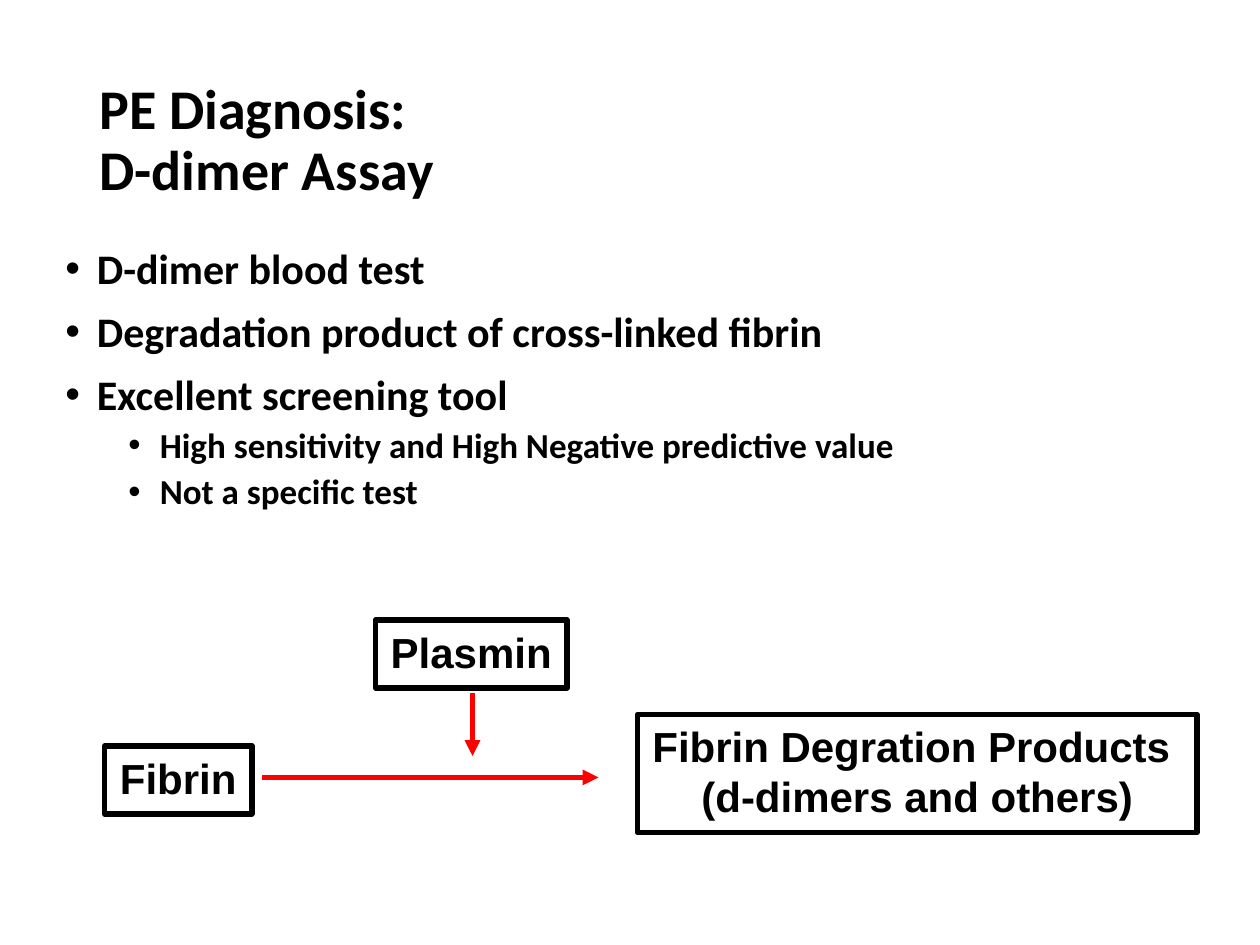
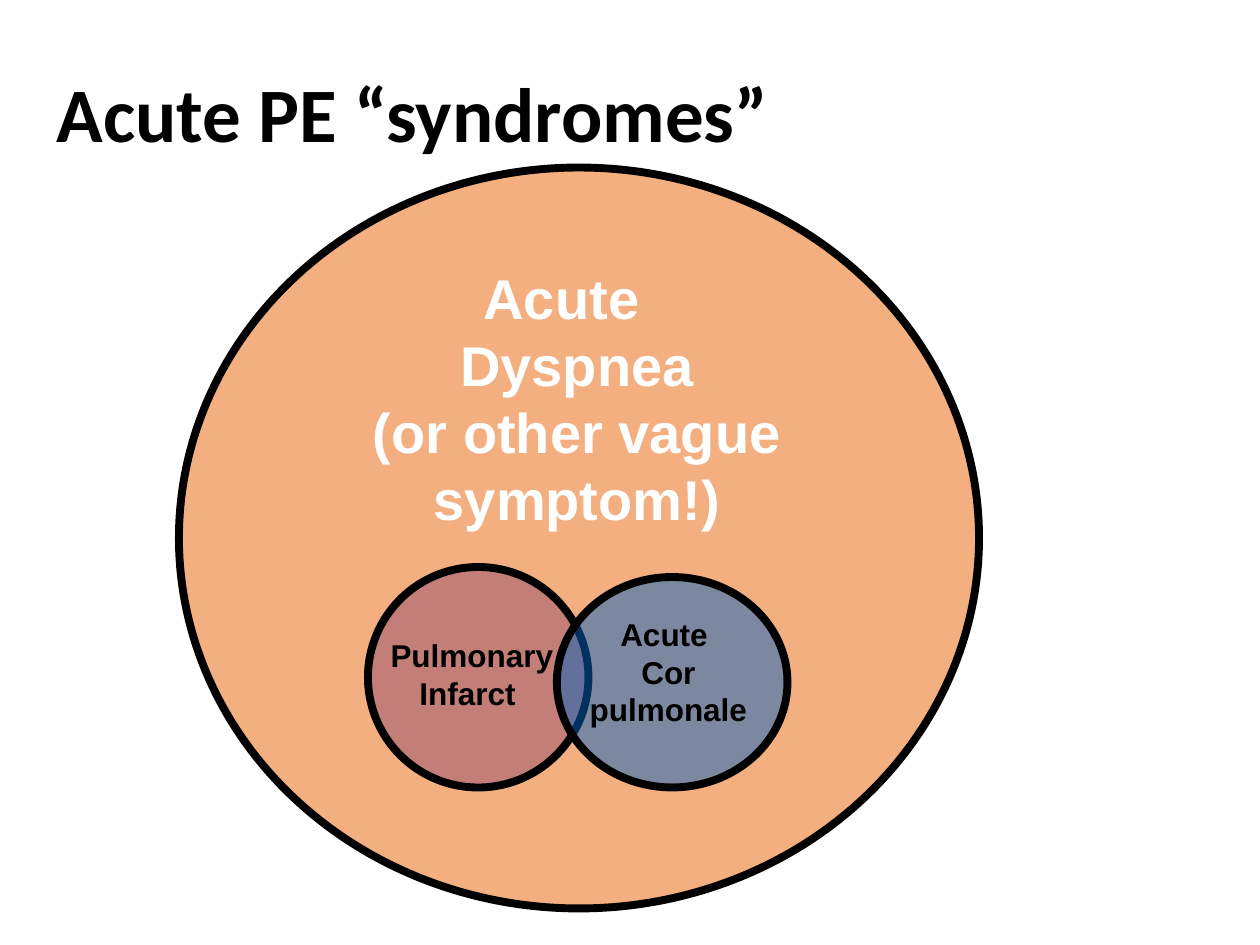
from dataclasses import dataclass

from lxml.etree import SubElement
from pptx import Presentation
from pptx.dml.color import RGBColor
from pptx.enum.shapes import MSO_CONNECTOR as Connector, MSO_SHAPE as Preset
from pptx.enum.text import MSO_ANCHOR as Anchor, MSO_AUTO_SIZE as AutoSize, PP_ALIGN as Align
from pptx.oxml.ns import qn
from pptx.util import Inches, Pt

COLORS = {
    "black": "000000",
    "white": "FFFFFF",
    "arrow": "FF0000",
    "dyspnea": "ED7D31",
    "infarct": "954F72",
    "cor": "0563C1",
}
HEADING_FONT = "Calibri"
LABEL_FONT = "Arial"


@dataclass(frozen=True)
class Area:
    left: float
    top: float
    width: float
    height: float

    def lengths(self) -> list:
        return [Inches(value) for value in (self.left, self.top, self.width, self.height)]


@dataclass(frozen=True)
class Label:
    area: Area
    lines: tuple[str, ...]
    size: int
    color: str = "black"
    wrap: bool = False


@dataclass(frozen=True)
class Circle:
    area: Area
    fill: str
    opacity: int


@dataclass(frozen=True)
class Arrow:
    start: tuple[float, float]
    end: tuple[float, float]


@dataclass(frozen=True)
class Bullet:
    text: str
    level: int = 0


BULLETS = (
    Bullet("D-dimer blood test"),
    Bullet("Degradation product of cross-linked fibrin"),
    Bullet("Excellent screening tool"),
    Bullet("High sensitivity and High Negative predictive value", 1),
    Bullet("Not a specific test", 1),
)
REACTION_BOXES = (
    Label(Area(0.83, 5.92, 1.17, 0.54), ("Fibrin",), 24),
    Label(Area(2.98, 4.92, 1.52, 0.54), ("Plasmin",), 24),
    Label(Area(5.06, 5.67, 4.44, 0.94),
          ("Fibrin Degration Products ", "(d-dimers and others)"), 24),
)
REACTION_ARROWS = (
    Arrow((2.08, 6.17), (4.75, 6.17)),
    Arrow((3.75, 5.5), (3.75, 6)),
)
SYNDROME_CIRCLES = (
    Circle(Area(1.42, 1.33, 6.35, 5.88), "dyspnea", 61),
    Circle(Area(2.92, 4.5, 1.75, 1.75), "infarct", 50),
    Circle(Area(4.42, 4.58, 1.83, 1.67), "cor", 50),
)
SYNDROME_LABELS = (
    Label(Area(2.8, 2.04, 3.56, 2.26),
          ("Acute  ", "Dyspnea", "(or other vague symptom!)"), 32, "white", True),
    Label(Area(4.58, 4.83, 1.45, 1), ("Acute ", "Cor", "pulmonale"), 18),
    Label(Area(3, 5, 1.49, 0.7), ("Pulmonary", "Infarct "), 18),
)


def rgb(name: str) -> RGBColor:
    return RGBColor.from_string(COLORS[name])


def add_span(para, text: str, font: str, size: int, color: str = "black") -> None:
    span = para.add_run()
    span.text = text
    span.font.name = font
    span.font.size = Pt(size)
    span.font.bold = True
    span.font.color.rgb = rgb(color)


def next_para(frame, index: int):
    return frame.add_paragraph() if index else frame.paragraphs[0]


def set_outline(line, color: str, width: float) -> None:
    line.color.rgb = rgb(color)
    line.width = Pt(width)


def add_title(page, area: Area, lines: tuple[str, ...], size: int) -> None:
    frame = page.shapes.add_textbox(*area.lengths()).text_frame
    frame.word_wrap = True
    frame.vertical_anchor = Anchor.MIDDLE
    para = frame.paragraphs[0]
    para.line_spacing = 0.9
    for index, text in enumerate(lines):
        if index:
            para.add_line_break()
        add_span(para, text, HEADING_FONT, size)


def add_bullets(page, area: Area, bullets: tuple[Bullet, ...]) -> None:
    frame = page.shapes.add_textbox(*area.lengths()).text_frame
    frame.word_wrap = True
    for index, bullet in enumerate(bullets):
        para = next_para(frame, index)
        para.level = bullet.level
        para.line_spacing = 0.9
        para.space_before = Pt(5 if bullet.level else 10)
        properties = para._p.get_or_add_pPr()
        properties.set("marL", str(Inches(0.25 + 0.5 * bullet.level)))
        properties.set("indent", str(Inches(-0.25)))
        SubElement(properties, qn("a:buFont"), typeface=LABEL_FONT)
        SubElement(properties, qn("a:buChar"), char="•")
        add_span(para, bullet.text, HEADING_FONT, 24 - 4 * bullet.level)


def write_label(frame, label: Label) -> None:
    frame.word_wrap = label.wrap
    frame.auto_size = AutoSize.SHAPE_TO_FIT_TEXT
    frame.vertical_anchor = Anchor.TOP
    for index, text in enumerate(label.lines):
        para = next_para(frame, index)
        para.alignment = Align.CENTER
        add_span(para, text, LABEL_FONT, label.size, label.color)


def add_box(shapes, label: Label) -> None:
    box = shapes.add_shape(Preset.RECTANGLE, *label.area.lengths())
    box.shadow.inherit = False
    box.fill.background()
    set_outline(box.line, "black", 3)
    write_label(box.text_frame, label)


def add_arrow(shapes, arrow: Arrow) -> None:
    ends = [Inches(value) for value in arrow.start + arrow.end]
    connector = shapes.add_connector(Connector.STRAIGHT, *ends)
    set_outline(connector.line, "arrow", 3)
    SubElement(connector.line._get_or_add_ln(), qn("a:tailEnd"), type="triangle")
    SubElement(connector._element.spPr, qn("a:effectLst"))


def add_circle(page, circle: Circle) -> None:
    oval = page.shapes.add_shape(Preset.OVAL, *circle.area.lengths())
    oval.shadow.inherit = False
    oval.fill.solid()
    oval.fill.fore_color.rgb = rgb(circle.fill)
    tint = oval._element.spPr.find(qn("a:solidFill"))[0]
    SubElement(tint, qn("a:alpha"), val=str(circle.opacity * 1000))
    set_outline(oval.line, "black", 4.5)


def build_assay(page) -> None:
    add_title(page, Area(0.69, 0.4, 8.62, 1.45), ("PE Diagnosis:", "D-dimer Assay"), 32)
    add_bullets(page, Area(0.42, 1.92, 9, 2.5), BULLETS)
    reaction = page.shapes.add_group_shape().shapes
    for label in REACTION_BOXES:
        add_box(reaction, label)
    for arrow in REACTION_ARROWS:
        add_arrow(reaction, arrow)


def build_syndromes(page) -> None:
    add_title(page, Area(0.35, 0.21, 8.62, 1.45), ("Acute PE “syndromes”",), 44)
    for circle in SYNDROME_CIRCLES:
        add_circle(page, circle)
    for label in SYNDROME_LABELS:
        write_label(page.shapes.add_textbox(*label.area.lengths()).text_frame, label)


def main() -> None:
    deck = Presentation()
    deck.slide_width, deck.slide_height = Inches(10), Inches(7.5)
    blank = deck.slide_layouts[6]
    for build in (build_assay, build_syndromes):
        build(deck.slides.add_slide(blank))
    deck.save("out.pptx")


if __name__ == "__main__":
    main()
